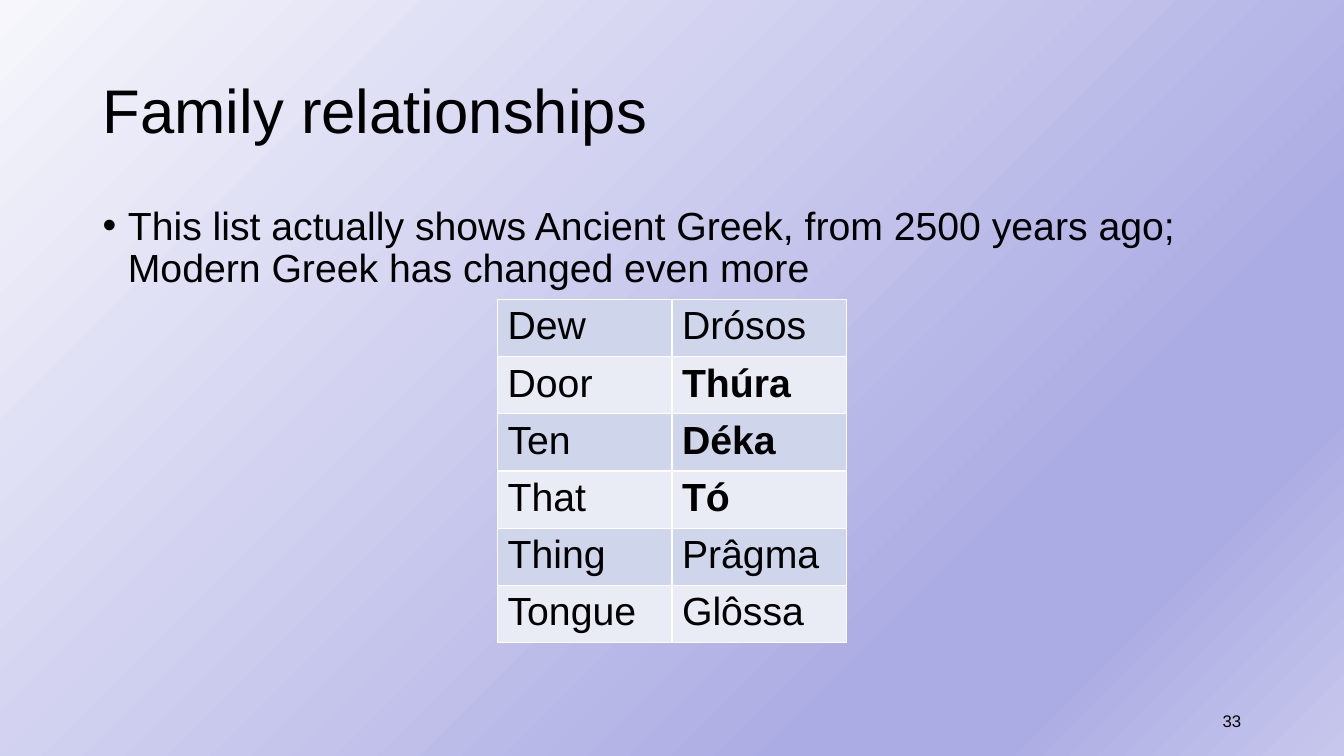
from dataclasses import dataclass

from lxml.etree import SubElement
from pptx import Presentation
from pptx.dml.color import RGBColor
from pptx.enum.text import MSO_ANCHOR as Anchor, PP_ALIGN as Align
from pptx.oxml import parse_xml
from pptx.oxml.ns import nsdecls, qn
from pptx.util import Inches, Pt

TITLE = "Family relationships"
BODY = ("This list actually shows Ancient Greek, from 2500 years ago; "
        "Modern Greek has changed even more")
PAGE = "33"
WORDS = [  # English, Ancient Greek, related
    ("Dew", "Drósos", False),
    ("Door", "Thúra", True),
    ("Ten", "Déka", True),
    ("That", "Tó", True),
    ("Thing", "Prâgma", False),
    ("Tongue", "Glôssa", False),
]


@dataclass(frozen=True)
class Theme:
    font: str = "Arial"
    ink: str = "000000"
    border: str = "FFFFFF"
    bands: tuple = ("CFD5EA", "E9EBF5")
    stops: tuple = ((0, "F6F6FC"), (74, "ACACE4"), (83, "ACACE4"), (100, "C7C7ED"))
    angle: int = 45
    title: int = 44
    body: int = 28
    page: int = 12


T = Theme()
W, H = 13.33, 7.5
MARGIN = 0.92
WIDE = W - 2 * MARGIN
COL_W, ROW_H = 1.73, 0.53
TABLE_TOP = 2.97


def paint_background(s):
    stops = "".join(f'<a:gs pos="{pos * 1000}"><a:srgbClr val="{color}"/></a:gs>'
                    for pos, color in T.stops)
    s.element.cSld.insert(0, parse_xml(
        f'<p:bg {nsdecls("p", "a")}><p:bgPr><a:gradFill rotWithShape="1">'
        f'<a:gsLst>{stops}</a:gsLst><a:lin ang="{T.angle * 60000}" scaled="0"/>'
        f'</a:gradFill><a:effectLst/></p:bgPr></p:bg>'))


def write(tf, text, size, bold=False, **paragraph):
    p = tf.paragraphs[0]
    for name, value in paragraph.items():
        setattr(p, name, value)
    r = p.add_run()
    r.text = text
    for name, value in dict(name=T.font, size=Pt(size), bold=bold).items():
        setattr(r.font, name, value)
    r.font.color.rgb = RGBColor.from_string(T.ink)
    return p


def add_text(s, box, text, size, anchor=Anchor.TOP, **paragraph):
    tf = s.shapes.add_textbox(*map(Inches, box)).text_frame
    tf.word_wrap, tf.vertical_anchor = True, anchor
    return write(tf, text, size, **paragraph)


def add_bullet(p, indent):
    pPr = p._p.get_or_add_pPr()
    pPr.set("marL", str(Inches(indent)))
    pPr.set("indent", str(-Inches(indent)))
    SubElement(pPr, qn("a:buFont"), typeface=T.font)
    SubElement(pPr, qn("a:buChar"), char="•")


def style_cell(cell, color):
    tcPr = cell._tc.get_or_add_tcPr()
    for side in "LRTB":
        ln = SubElement(tcPr, qn(f"a:ln{side}"), w=str(Pt(1)))
        SubElement(SubElement(ln, qn("a:solidFill")), qn("a:srgbClr"), val=T.border)
    cell.fill.solid()
    cell.fill.fore_color.rgb = RGBColor.from_string(color)


def add_word_table(s):
    width, height = 2 * COL_W, len(WORDS) * ROW_H
    box = ((W - width) / 2, TABLE_TOP, width, height)
    table = s.shapes.add_table(len(WORDS), 2, *map(Inches, box)).table
    table.first_row = False
    for row, (english, greek, related) in enumerate(WORDS):
        for col, (word, bold) in enumerate([(english, False), (greek, related)]):
            cell = table.cell(row, col)
            style_cell(cell, T.bands[row % 2])
            write(cell.text_frame, word, T.body, bold)


def main():
    prs = Presentation()
    prs.slide_width, prs.slide_height = Inches(W), Inches(H)
    s = prs.slides.add_slide(prs.slide_layouts[6])
    paint_background(s)
    add_text(s, (MARGIN, 0.4, WIDE, 1.45), TITLE, T.title, Anchor.MIDDLE,
             line_spacing=0.9)
    p = add_text(s, (MARGIN, 2, WIDE, 5.35), BODY, T.body,
                 line_spacing=0.9, space_before=Pt(10))
    add_bullet(p, 0.25)
    add_text(s, (W - MARGIN - 3, 6.95, 3, 0.4), PAGE, T.page, Anchor.MIDDLE,
             alignment=Align.RIGHT)
    add_word_table(s)
    prs.save("out.pptx")


if __name__ == "__main__":
    main()
